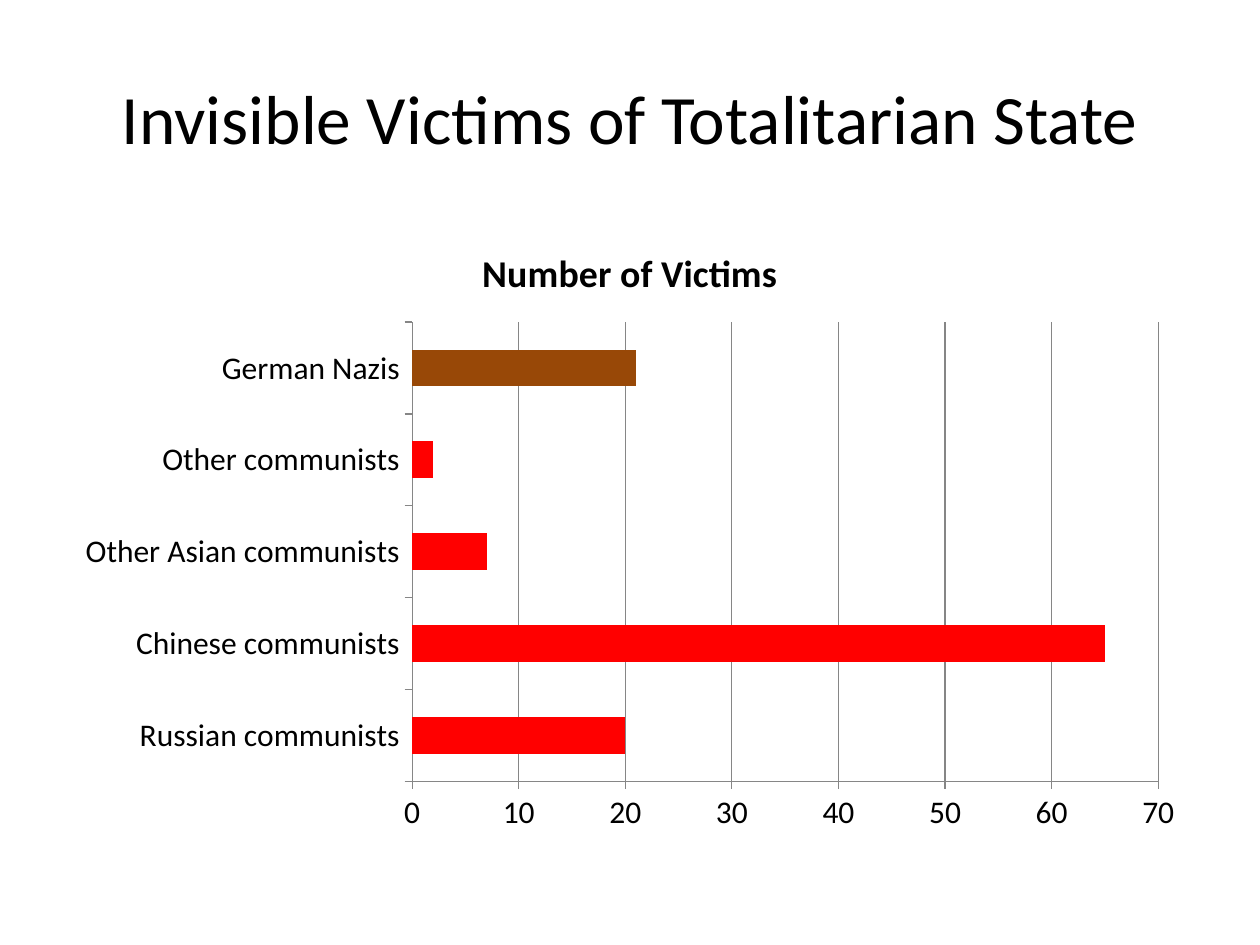
from pptx import Presentation
from pptx.chart.data import CategoryChartData
from pptx.dml.color import RGBColor
from pptx.enum.chart import XL_CHART_TYPE as ChartType, XL_TICK_MARK as TickMark
from pptx.enum.text import MSO_ANCHOR as Anchor, PP_ALIGN as Align
from pptx.util import Inches, Pt

FONT = "Calibri"
BLACK, GRAY, RED, BROWN = "000000", "868686", "FF0000", "984807"
VICTIMS = {
    "Russian communists": 20,
    "Chinese communists": 65,
    "Other Asian communists": 7,
    "Other communists": 2,
    "German Nazis": 21,
}


def color(value):
    return RGBColor.from_string(value)


def set_font(font, size, bold=False):
    font.name = FONT
    font.size = Pt(size)
    font.bold = bold
    font.color.rgb = color(BLACK)


def set_line(line):
    line.color.rgb = color(GRAY)
    line.width = Pt(0.75)


def paint(part, value):
    part.format.fill.solid()
    part.format.fill.fore_color.rgb = color(value)


def add_title(page, left, top, width, height):
    box = page.shapes.add_textbox(left, top, width, height)
    frame = box.text_frame
    frame.word_wrap = True
    frame.vertical_anchor = Anchor.MIDDLE
    para = frame.paragraphs[0]
    para.text = "Invisible Victims of Totalitarian State"
    para.alignment = Align.CENTER
    set_font(para.font, 39.6)


def add_victims_chart(page, left, top, width, height):
    data = CategoryChartData()
    data.categories = list(VICTIMS)
    data.add_series("Number of Victims", list(VICTIMS.values()))
    chart = page.shapes.add_chart(
        ChartType.BAR_CLUSTERED, left, top, width, height, data
    ).chart
    set_font(chart.font, 18)
    chart.has_legend = False

    chart.has_title = True
    para = chart.chart_title.text_frame.paragraphs[0]
    para.text = "Number of Victims"
    set_font(para.font, 21.6, bold=True)
    chart.chart_title.include_in_layout = False

    for axis in (chart.category_axis, chart.value_axis):
        axis.major_tick_mark = TickMark.OUTSIDE
        axis.minor_tick_mark = TickMark.NONE
        set_line(axis.format.line)
    values = chart.value_axis
    values.minimum_scale, values.maximum_scale, values.major_unit = 0, 70, 10
    values.has_major_gridlines = True
    set_line(values.major_gridlines.format.line)

    plot = chart.plots[0]
    plot.gap_width = 150
    plot.vary_by_categories = False
    bars = plot.series[0]
    paint(bars, RED)
    paint(bars.points[list(VICTIMS).index("German Nazis")], BROWN)


def main():
    deck = Presentation()
    deck.slide_width, deck.slide_height = Inches(10), Inches(7.5)
    page = deck.slides.add_slide(deck.slide_layouts[6])
    add_title(page, Inches(0.5), Inches(0.3), Inches(9), Inches(1.25))
    add_victims_chart(page, Inches(0.5), Inches(1.75), Inches(9), Inches(4.95))
    deck.save("out.pptx")


if __name__ == "__main__":
    main()
